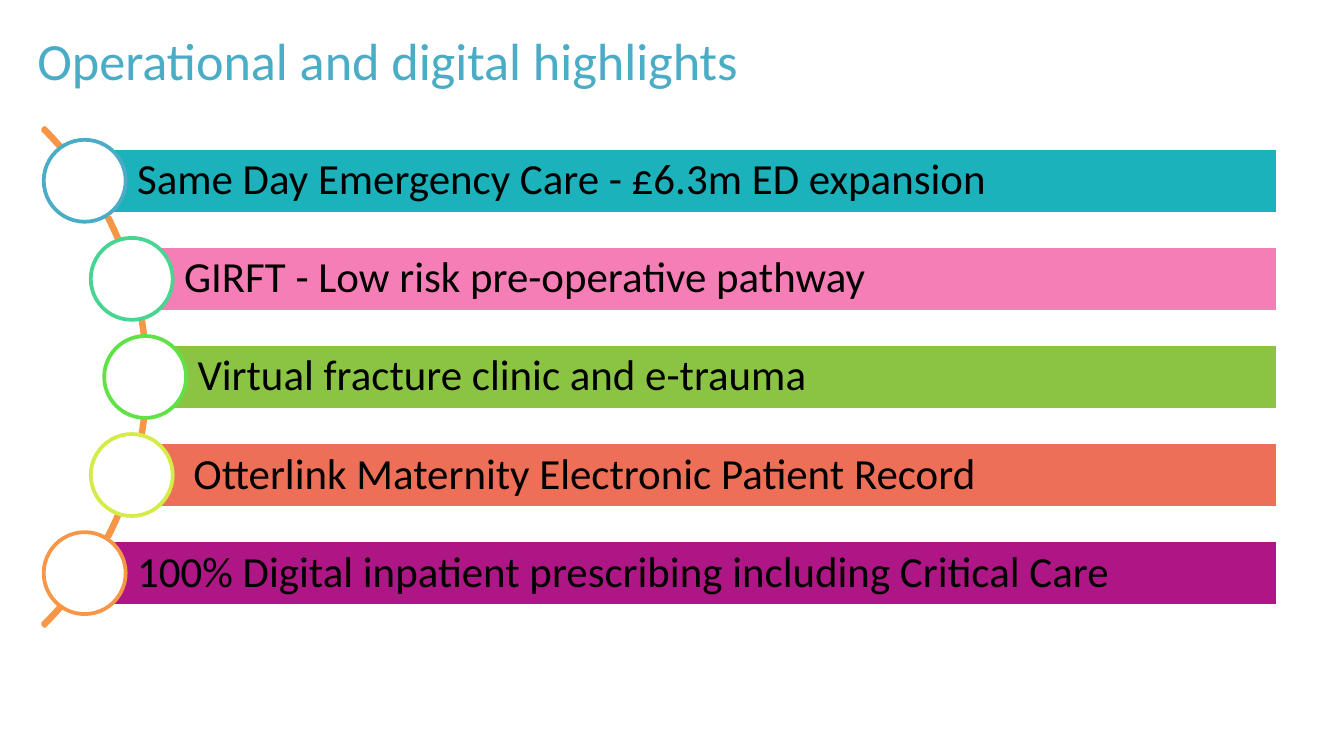
import pptx
import pptx.util
import pptx.dml.color
import pptx.enum.shapes
import pptx.enum.text

Inches, Pt = pptx.util.Inches, pptx.util.Pt
KIND = pptx.enum.shapes.MSO_SHAPE
ALIGN = pptx.enum.text.PP_ALIGN
ANCHOR = pptx.enum.text.MSO_ANCHOR

HEX = {
    "title": "4BACC6", "arc": "F79646", "text": "000000", "white": "FFFFFF",
    "teal": "1BB2BB", "pink": "F57EB6", "green": "8BC443",
    "coral": "ED6F57", "plum": "AF1685",
    "blue": "4BACC6", "mint": "48D491", "lime": "60E146",
    "yellow": "D5EC46", "orange": "F79646",
}
TITLE = "Operational and digital highlights"
# text, bar left, text inset, bar colour, ring colour
ROWS = [
    ("Same Day Emergency Care - £6.3m ED expansion", 0.63, 0.39, "teal", "blue"),
    ("GIRFT - Low risk pre-operative pathway", 0.98, 0.39, "pink", "mint"),
    ("Virtual fracture clinic and e-trauma", 1.08, 0.39, "green", "lime"),
    ("Otterlink Maternity Electronic Patient Record", 0.98, 0.46, "coral", "yellow"),
    ("100% Digital inpatient prescribing including Critical Care",
     0.63, 0.39, "plum", "orange"),
]
TOP, STEP = 1.1, 0.73  # top of the first bar, distance between bars
BAR, RING, RIGHT = 0.49, 0.61, 9.51
ARC = 5.24


def color(name):
    return pptx.dml.color.RGBColor.from_string(HEX[name])


def style(para, size, name):
    para.font.name = "Calibri"
    para.font.size = Pt(size)
    para.font.color.rgb = color(name)


def add(kind, left, mid, width, height, fill, line):
    """Add a shape centred vertically on mid."""
    shape = slide.shapes.add_shape(
        kind, Inches(left), Inches(mid - height / 2), Inches(width), Inches(height))
    shape.shadow.inherit = False
    if fill:
        shape.fill.solid()
        shape.fill.fore_color.rgb = color(fill)
    else:
        shape.fill.background()
    shape.line.color.rgb = color(line)
    shape.line.width = Pt(2)
    return shape


deck = pptx.Presentation()
deck.slide_width = Inches(10)
deck.slide_height = deck.slide_width * 9 // 16
slide = deck.slides.add_slide(deck.slide_layouts[6])

title = slide.shapes.add_textbox(Inches(0.18), Inches(0.16), Inches(9), Inches(0.94))
title.text_frame.word_wrap = True
title.text_frame.text = TITLE
style(title.text_frame.paragraphs[0], 28, "title")

first = TOP + BAR / 2
arc = add(KIND.BLOCK_ARC, -4.14, first + STEP * (len(ROWS) - 1) / 2, ARC, ARC, None, "arc")
for i, value in enumerate((189, 27, 0.004)):
    arc.adjustments[i] = value

for i, (text, left, inset, fill, ring) in enumerate(ROWS):
    mid = first + i * STEP
    bar = add(KIND.RECTANGLE, left, mid, RIGHT - left, BAR, fill, "white")
    frame = bar.text_frame
    frame.word_wrap = True
    frame.vertical_anchor = ANCHOR.MIDDLE
    frame.margin_left = Inches(inset)
    frame.margin_right = frame.margin_top = frame.margin_bottom = Inches(0.06)
    frame.text = text
    para = frame.paragraphs[0]
    para.alignment = ALIGN.LEFT
    para.line_spacing = 0.9
    style(para, 23, "text")
    add(KIND.OVAL, left - RING / 2, mid, RING, RING, "white", ring)

deck.save("out.pptx")
